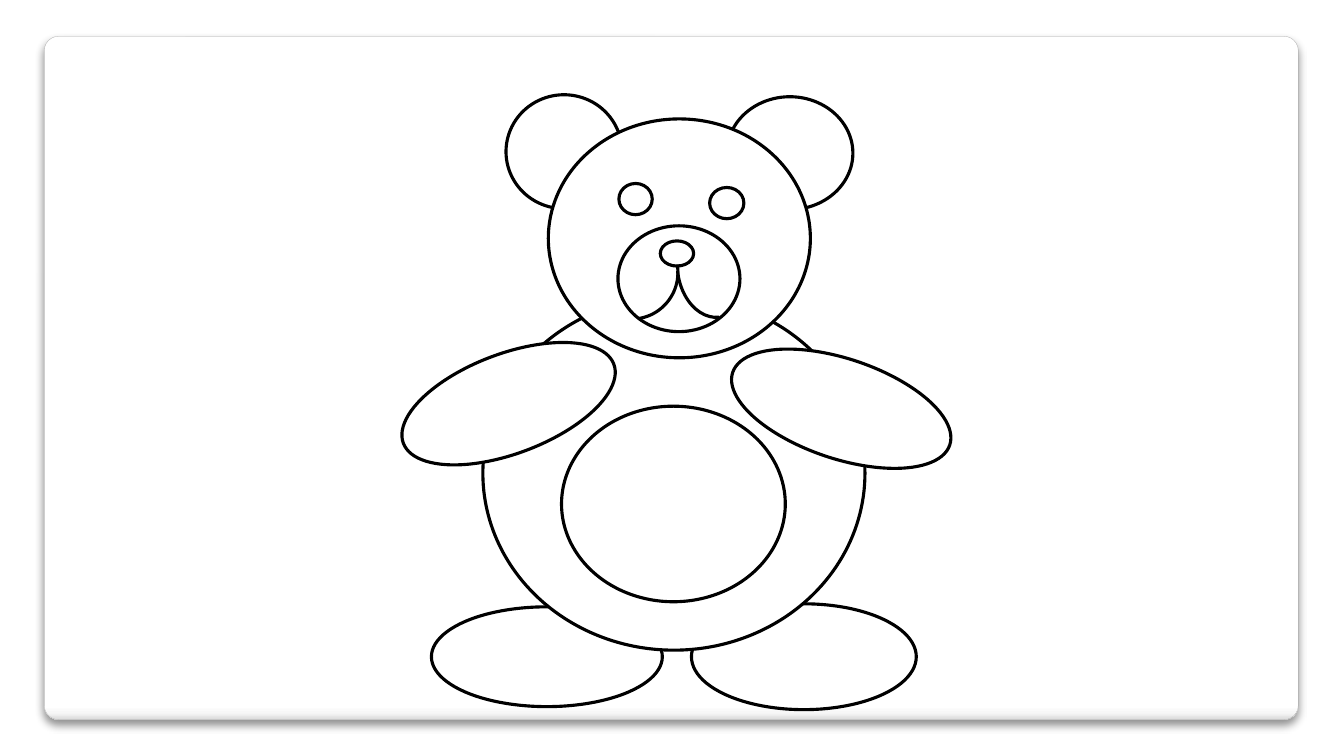
from lxml import etree
from pptx import Presentation
from pptx.dml.color import RGBColor
from pptx.enum.shapes import MSO_SHAPE
from pptx.oxml.ns import qn
from pptx.util import Inches, Pt

OVAL = MSO_SHAPE.OVAL
ARC = MSO_SHAPE.ARC
ROUNDED = MSO_SHAPE.ROUNDED_RECTANGLE

WHITE = RGBColor(0xFF, 0xFF, 0xFF)
BLACK = RGBColor(0x00, 0x00, 0x00)
CARD_EDGE = RGBColor(0xA4, 0xA4, 0xA4)
CARD_LIP = RGBColor(0xF7, 0xF7, 0xF7)
CARD_BOTTOM = RGBColor(0xDA, 0xDA, 0xDA)

# Gradient stops: percent down the card, colour
CARD_STOPS = [(0, WHITE), (98, WHITE), (99, CARD_LIP), (100, CARD_BOTTOM)]

# Bear parts from back to front: left, top, width, height in percent, rotation
EARS_FEET_BODY = [
    (51.45, 79.87, 16.73, 14, 0),       # right foot
    (32.1, 80.27, 17.18, 13.2, 0),      # left foot
    (54.08, 12.8, 9.38, 14.93, 0),      # right ear
    (37.65, 12.53, 8.63, 15.07, 0),     # left ear
    (35.93, 39.2, 28.43, 46.8, 0),      # body
    (41.78, 53.73, 16.65, 25.87, 0),    # belly
]
HEAD_AND_ARMS = [
    (40.8, 15.73, 19.5, 31.6, 0),       # head
    (29.48, 46.8, 16.73, 13.2, -20.6),  # left arm
    (54.08, 47.47, 17.03, 13.2, 18.5),  # right arm
]
FACE = [
    (45.98, 29.87, 9.08, 14, 0),        # muzzle
    (49.13, 31.87, 2.48, 3.33, 0),      # nose
    (46.05, 24.27, 2.48, 4.13, 0),      # left eye
    (52.8, 24.8, 2.55, 4.13, 0),        # right eye
]
MOUTH = [
    (50.4, 28.67, 5.48, 13.33, 174.3),  # right curve
    (43.5, 29.87, 6.98, 12.27, 80.7),   # left curve
]


def add_colour(parent, colour, alpha=None):
    element = etree.SubElement(parent, qn("a:srgbClr"), val=str(colour))
    if alpha is not None:
        etree.SubElement(element, qn("a:alpha"), val=str(alpha * 1000))


class BearSlide:
    outline_width = Pt(2.25)

    def __init__(self, presentation):
        self.width = presentation.slide_width
        self.height = presentation.slide_height
        self.slide = presentation.slides.add_slide(presentation.slide_layouts[6])

    def place(self, kind, left, top, width, height):
        """Add a shape whose box is given in percent of the slide."""
        shape = self.slide.shapes.add_shape(
            kind,
            round(self.width * left / 100), round(self.height * top / 100),
            round(self.width * width / 100), round(self.height * height / 100))
        shape.shadow.inherit = False
        return shape

    def card(self, left, top, width, height):
        shape = self.place(ROUNDED, left, top, width, height)
        shape.adjustments[0] = 0.021
        shape.line.color.rgb = CARD_EDGE
        shape.line.width = Pt(0.16)
        shape.fill.gradient()
        shape.fill.gradient_angle = 270
        properties = shape.element.spPr
        stops = properties.find(".//" + qn("a:gsLst"))
        for stop in list(stops):
            stops.remove(stop)
        for position, colour in CARD_STOPS:
            stop = etree.SubElement(stops, qn("a:gs"), pos=str(position * 1000))
            add_colour(stop, colour)
        shadow = etree.SubElement(
            properties.find(qn("a:effectLst")), qn("a:outerShdw"),
            blurRad=str(Pt(6)), dist=str(Pt(4)), dir="5400000", rotWithShape="0")
        add_colour(shadow, BLACK, 44)

    def outline(self, kind, box, rotation):
        shape = self.place(kind, *box)
        shape.rotation = rotation
        shape.line.color.rgb = BLACK
        shape.line.width = self.outline_width
        return shape

    def oval(self, *box, rotation):
        shape = self.outline(OVAL, box, rotation)
        shape.fill.solid()
        shape.fill.fore_color.rgb = WHITE

    def curve(self, *box, rotation):
        self.outline(ARC, box, rotation).fill.background()


def main():
    presentation = Presentation()
    presentation.slide_width = Inches(13.33)
    presentation.slide_height = Inches(7.5)
    bear = BearSlide(presentation)

    # Background card
    bear.card(3.3, 4.8, 93.3, 90.4)

    # Bear
    for *box, rotation in EARS_FEET_BODY + HEAD_AND_ARMS + FACE:
        bear.oval(*box, rotation=rotation)
    for *box, rotation in MOUTH:
        bear.curve(*box, rotation=rotation)

    presentation.save("out.pptx")


if __name__ == "__main__":
    main()
